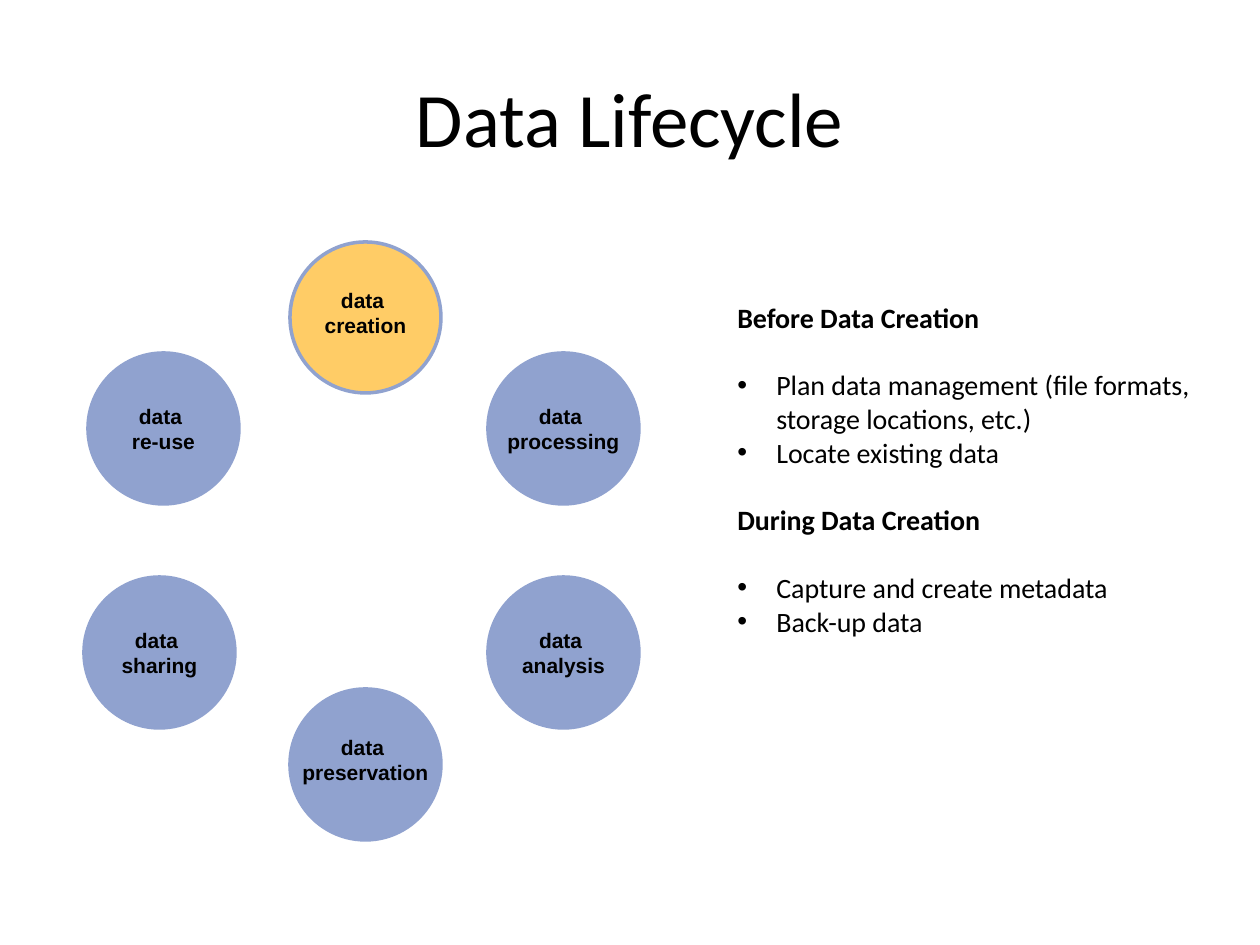
from lxml.etree import SubElement
from pptx import Presentation
from pptx.dml.color import RGBColor
from pptx.enum.shapes import MSO_SHAPE
from pptx.enum.text import MSO_ANCHOR, PP_ALIGN
from pptx.oxml.ns import qn
from pptx.util import Emu, Pt

PX = 914400 / 126
THEME = {
    "blue": RGBColor(0x90, 0xA2, 0xCF),
    "yellow": RGBColor(0xFF, 0xCC, 0x66),
    "text": RGBColor(0, 0, 0),
    "title": {"name": "Calibri", "size": Pt(44), "bold": False},
    "label": {"name": "Arial", "size": Pt(12), "bold": True},
    "heading": {"name": "Calibri", "size": Pt(16), "bold": True},
    "item": {"name": "Calibri", "size": Pt(16), "bold": False},
}


def px(*lengths):
    """Turn px lengths into EMU."""
    return [Emu(round(n * PX)) for n in lengths]


def write_line(p, text, style, align=PP_ALIGN.LEFT):
    p.alignment = align
    r = p.add_run()
    r.text = text
    for key, value in THEME[style].items():
        setattr(r.font, key, value)
    r.font.color.rgb = THEME["text"]


prs = Presentation()
prs.slide_width, prs.slide_height = px(1260, 945)
s = prs.slides.add_slide(prs.slide_layouts[6])

# Stages of the cycle: name, circle left and top, label width and drop, fill
DIAMETER, LABEL_HEIGHT = 151, 63
stages = [
    ("creation", 290, 242, 108, 39, "yellow"),
    ("preservation", 290, 689, 152, 39, "blue"),
    ("processing", 488, 353, 139, 44, "blue"),
    ("analysis", 488, 577, 108, 44, "blue"),
    ("re-use", 88, 353, 89, 44, "blue"),
    ("sharing", 84, 577, 102, 44, "blue"),
]
for name, left, top, width, drop, fill in stages:
    sp = s.shapes.add_shape(MSO_SHAPE.OVAL, *px(left, top, DIAMETER, DIAMETER))
    sp.shadow.inherit = False
    sp.fill.solid()
    sp.fill.fore_color.rgb = THEME[fill]
    sp.line.color.rgb = THEME["blue"]
    sp.line.width = Pt(2)

    label_left = left + (DIAMETER - width) / 2
    tf = s.shapes.add_textbox(*px(label_left, top + drop, width, LABEL_HEIGHT)).text_frame
    tf.word_wrap = False
    write_line(tf.paragraphs[0], "data ", "label", PP_ALIGN.CENTER)
    write_line(tf.add_paragraph(), name, "label", PP_ALIGN.CENTER)

# Tasks around data creation
sections = [
    ("Before Data Creation", [
        "Plan data management (file formats, storage locations, etc.)",
        "Locate existing data",
    ]),
    ("During Data Creation", ["Capture and create metadata", "Back-up data"]),
]
LINE_GAP = Pt(19.5)
INDENT = px(39)[0]
tf = s.shapes.add_textbox(*px(725, 294, 504, 391)).text_frame
tf.word_wrap = True
p = tf.paragraphs[0]
for i, (heading, items) in enumerate(sections):
    if i:
        p = tf.add_paragraph()
        p.space_before = LINE_GAP
    write_line(p, heading, "heading")
    p.space_after = LINE_GAP
    for item in items:
        p = tf.add_paragraph()
        write_line(p, item, "item")
        pPr = p._p.get_or_add_pPr()
        pPr.set("marL", str(INDENT))
        pPr.set("indent", str(-INDENT))
        SubElement(pPr, qn("a:buFont"), typeface="Arial")
        SubElement(pPr, qn("a:buChar"), char="•")

tf = s.shapes.add_textbox(*px(63, 38, 1134, 158)).text_frame
tf.word_wrap = True
tf.vertical_anchor = MSO_ANCHOR.MIDDLE
write_line(tf.paragraphs[0], "Data Lifecycle", "title", PP_ALIGN.CENTER)

prs.save("out.pptx")
